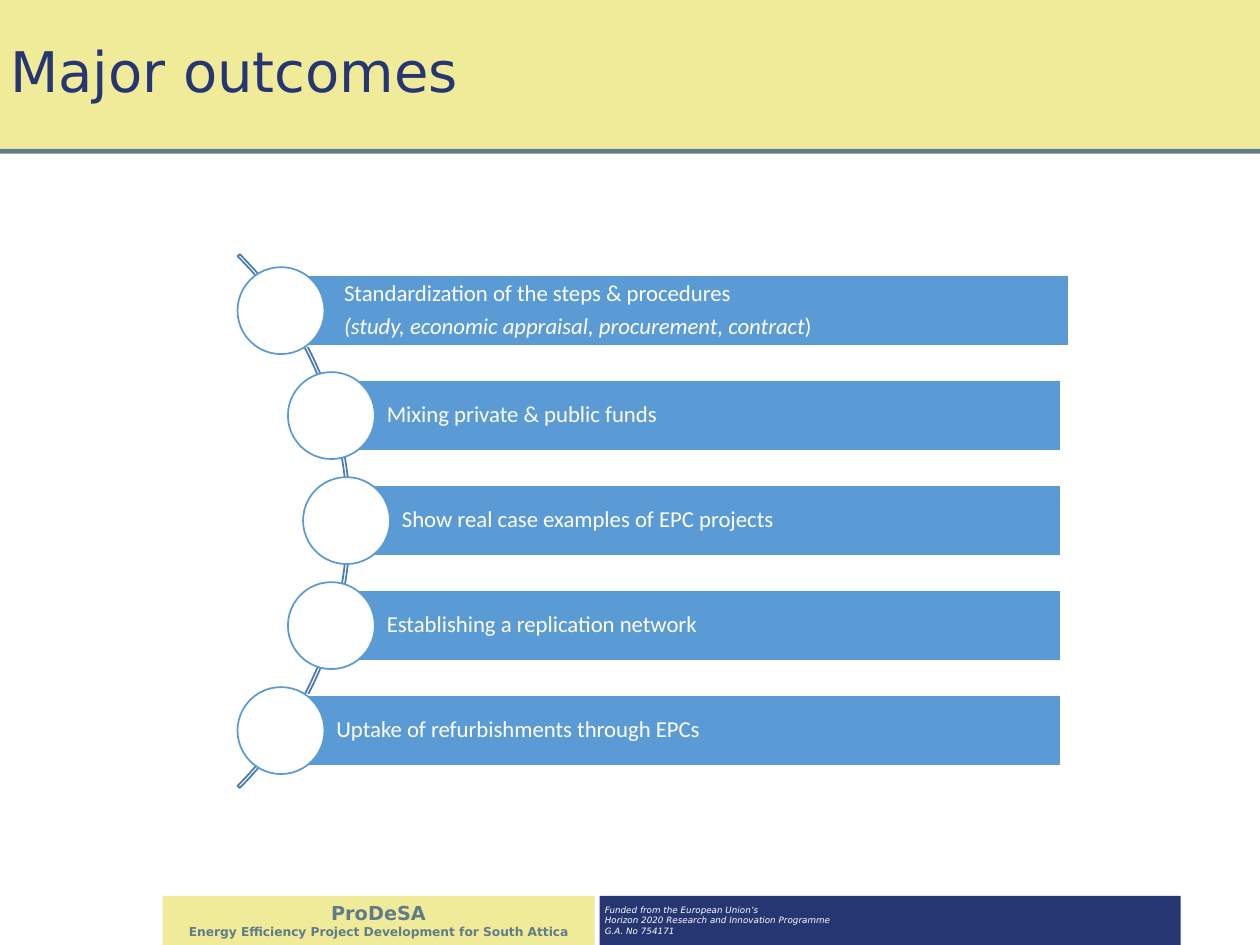
import pptx
import pptx.dml.color
import pptx.enum.shapes
import pptx.enum.text
import pptx.util

HEADING = "Major outcomes"
PROJECT = [
    [("ProDeSA", "project")],
    [("Energy Efficiency Project Development for South Attica", "tagline")],
]
FUNDING = [
    [("Funded from the European Union’s", "funding")],
    [("Horizon 2020 Research and Innovation Programme", "funding")],
    [("G.A. No 754171", "funding")],
]
OUTCOMES = [
    [
        [("Standardization of the steps & procedures", "outcome")],
        [("(study, economic appraisal, procurement, contract", "detail"), (")", "outcome")],
    ],
    [[("Mixing private & public funds", "outcome")]],
    [[("Show real case examples of EPC projects", "outcome")]],
    [[("Establishing a replication network", "outcome")]],
    [[("Uptake of refurbishments through EPCs", "outcome")]],
]

THEME = {
    "colours": {
        "cream": "F0EB99", "navy": "263673", "slate": "627B8B",
        "blue": "5B9BD5", "arc": "497CAB", "white": "FFFFFF",
    },
    "fonts": {
        "heading": ("navy", {"name": "DejaVu Sans", "size": pptx.util.Pt(32)}),
        "project": ("slate", {"name": "DejaVu Sans", "size": pptx.util.Pt(11), "bold": True}),
        "tagline": ("slate", {"name": "DejaVu Sans", "size": pptx.util.Pt(7), "bold": True}),
        "funding": ("white", {"name": "DejaVu Sans", "size": pptx.util.Pt(5), "italic": True}),
        "outcome": ("white", {"name": "Calibri", "size": pptx.util.Pt(13)}),
        "detail": ("white", {"name": "Calibri", "size": pptx.util.Pt(13), "italic": True}),
    },
    "outline": pptx.util.Pt(1),
}

COLUMNS, ROWS = 100, 75
CELL = pptx.util.Inches(0.1)
OUTCOME_PITCH = ROWS / 9
CIRCLE_SIZE, CIRCLE_TOP = 6.9, 21.2
BAR_HEIGHT, BAR_RIGHT = 5.6, 84.2
CIRCLE_CENTRES = [22.3, 26.3, 27.5, 26.3, 22.3]
BAR_SHIFTS = [0.6, 0, 0, 0, 0]

KINDS = pptx.enum.shapes.MSO_SHAPE
LEFT, CENTRE = pptx.enum.text.PP_ALIGN.LEFT, pptx.enum.text.PP_ALIGN.CENTER


def cells(count):
    return round(count * CELL)


def colour(name):
    return pptx.dml.color.RGBColor.from_string(THEME["colours"][name])


def apply(target, formats):
    for attribute, value in formats.items():
        setattr(target, attribute, value)


def draw(slide, kind, area, fill=None, outline=None):
    figure = slide.shapes.add_shape(kind, *map(cells, area))
    figure.shadow.inherit = False
    if fill:
        figure.fill.solid()
        figure.fill.fore_color.rgb = colour(fill)
    else:
        figure.fill.background()
    if outline:
        figure.line.color.rgb = colour(outline)
        figure.line.width = THEME["outline"]
    else:
        figure.line.fill.background()
    return figure


def write(figure, lines, inset, left_inset=None, **layout):
    frame = figure.text_frame
    apply(frame, {
        "word_wrap": True,
        "vertical_anchor": pptx.enum.text.MSO_ANCHOR.MIDDLE,
        "margin_left": cells(left_inset or inset),
        "margin_right": cells(inset),
        "margin_top": cells(inset),
        "margin_bottom": cells(inset),
    })
    for number, line in enumerate(lines):
        paragraph = frame.add_paragraph() if number else frame.paragraphs[0]
        apply(paragraph, {"alignment": LEFT, **layout})
        for wording, style in line:
            run = paragraph.add_run()
            run.text = wording
            tint, formats = THEME["fonts"][style]
            run.font.color.rgb = colour(tint)
            apply(run.font, formats)


def main():
    deck = pptx.Presentation()
    apply(deck, {"slide_width": cells(COLUMNS), "slide_height": cells(ROWS)})
    slide = deck.slides.add_slide(deck.slide_layouts[6])

    funding = draw(slide, KINDS.RECTANGLE, (47.6, 71.1, 46.1, 3.9), "navy")
    write(funding, FUNDING, 0.4)
    draw(slide, KINDS.RECTANGLE, (0, 11.8, COLUMNS, 0.4), "slate")
    heading = draw(slide, KINDS.RECTANGLE, (0, 0, COLUMNS, 11.8), "cream")
    write(heading, [[(HEADING, "heading")]], 0.8, line_spacing=0.9)
    project = draw(slide, KINDS.RECTANGLE, (12.9, 71.1, 34.3, 3.9), "cream")
    write(project, PROJECT, 0.4, alignment=CENTRE)

    arc = draw(slide, KINDS.BLOCK_ARC, (-32.1, 11.4, 59.9, 59.9), outline="arc")
    for index, bend in enumerate((189, 27, 0.004)):
        arc.adjustments[index] = bend

    for row, (lines, centre, shift) in enumerate(zip(OUTCOMES, CIRCLE_CENTRES, BAR_SHIFTS)):
        circle_top = CIRCLE_TOP + row * OUTCOME_PITCH
        bar_top = circle_top + (CIRCLE_SIZE - BAR_HEIGHT) / 2
        bar_area = (centre + shift, bar_top, BAR_RIGHT - centre, BAR_HEIGHT)
        bar = draw(slide, KINDS.RECTANGLE, bar_area, "blue", "white")
        write(bar, lines, 0.4, 4.4, line_spacing=0.9, space_after=pptx.util.Pt(4.55))
        circle_area = (centre - CIRCLE_SIZE / 2, circle_top, CIRCLE_SIZE, CIRCLE_SIZE)
        draw(slide, KINDS.OVAL, circle_area, "white", "blue")

    deck.save("out.pptx")


if __name__ == "__main__":
    main()
